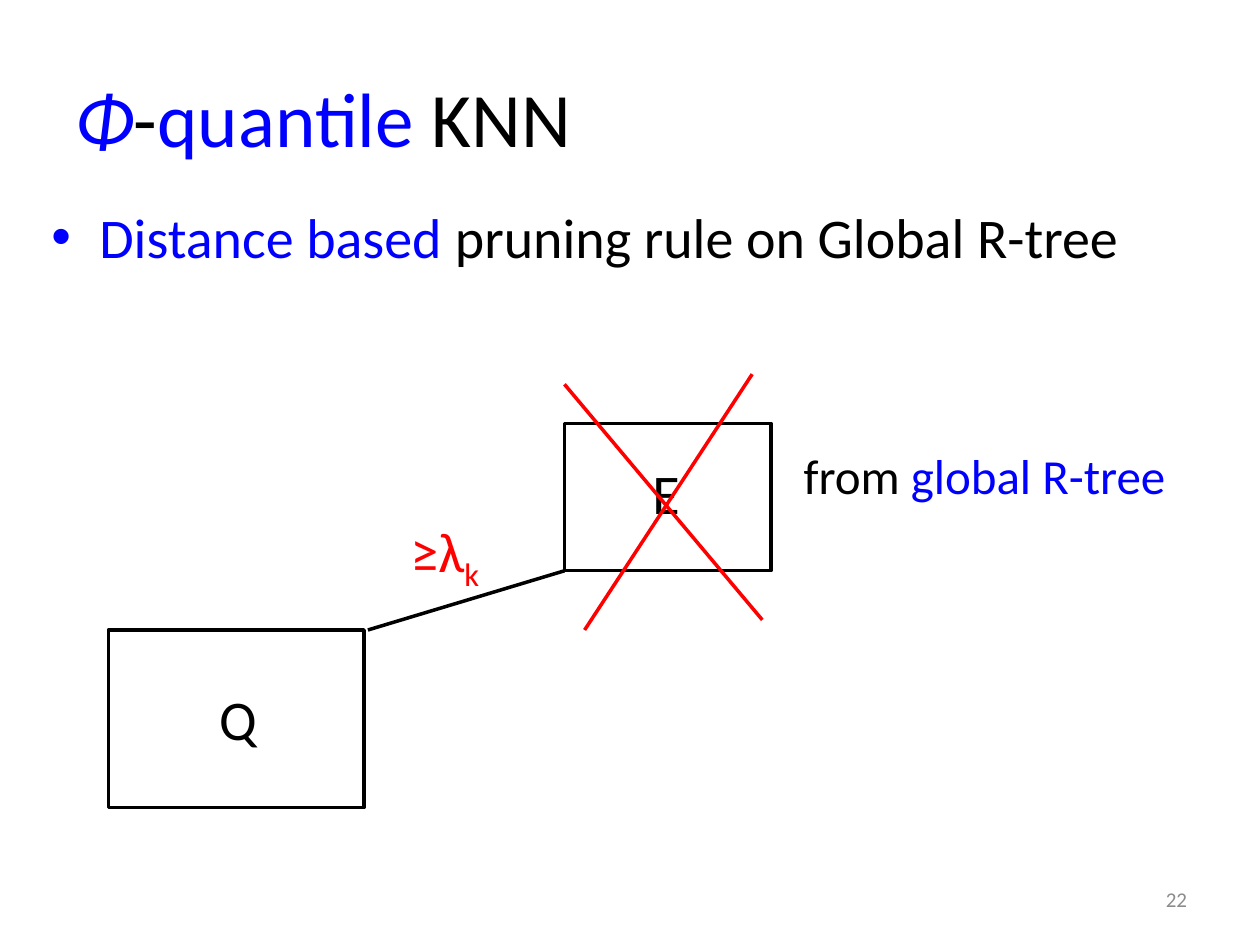
import pptx
import pptx.util
import pptx.dml.color
import pptx.enum.shapes
import pptx.enum.text
import pptx.oxml.ns
import lxml.etree

Pt = pptx.util.Pt
ALIGN = pptx.enum.text.PP_ALIGN
ANCHOR = pptx.enum.text.MSO_ANCHOR
COLORS = {"black": "000000", "blue": "0000FF", "red": "FF0000", "gray": "8C8C8C"}
RGB = {name: pptx.dml.color.RGBColor.from_string(h) for name, h in COLORS.items()}

prs = pptx.Presentation()
prs.slide_width = pptx.util.Inches(10)
prs.slide_height = pptx.util.Inches(7.5)
COL, ROW = prs.slide_width / 100, prs.slide_height / 75
s = prs.slides.add_slide(prs.slide_layouts[6])


def grid(*values):
    """Turn alternating columns and rows into slide lengths."""
    return [round(v * (ROW if i % 2 else COL)) for i, v in enumerate(values)]


def add_text(box, size, parts, wrap=False, anchor=ANCHOR.TOP, align=ALIGN.LEFT):
    """Add a one-paragraph text box from (text, colour) parts."""
    sp = s.shapes.add_textbox(*grid(*box))
    tf = sp.text_frame
    tf.word_wrap = wrap
    tf.vertical_anchor = anchor
    p = tf.paragraphs[0]
    p.alignment = align
    for text, color in parts:
        r = p.add_run()
        r.text = text
        r.font.name = "Calibri"
        r.font.size = Pt(size)
        r.font.color.rgb = RGB[color]
    return p


title = add_text((5, 3, 90, 12.5), 44,
                 [("Φ", "blue"), ("-", "black"), ("quantile ", "blue"), ("KNN", "black")],
                 wrap=True, anchor=ANCHOR.MIDDLE)
title.runs[0].font.italic = True

rule = add_text((3.1, 15.6, 90, 8.6), 32,
                [("Distance based ", "blue"), ("pruning rule on Global R-tree", "black")],
                wrap=True)
rule.space_before = Pt(6.4)
pPr = rule._p.get_or_add_pPr()
indent = pptx.util.Inches(0.38)
pPr.set("marL", str(indent))
pPr.set("indent", str(-indent))
for tag, attrs in (("a:buFont", {"typeface": "Arial"}), ("a:buChar", {"char": "•"})):
    lxml.etree.SubElement(pPr, pptx.oxml.ns.qn(tag), attrs)

add_text((71.9, 69.4, 23.3, 4), 12, [("22", "gray")],
         wrap=True, anchor=ANCHOR.MIDDLE, align=ALIGN.RIGHT)

# Query rectangle Q and tree entry E, each with its label
for name, box, label in (("Q", (8.6, 50, 20.3, 14.1), (16.4, 53.8, 5, 6.4)),
                         ("E", (44.8, 33.6, 16.4, 11.7), (50.8, 35.9, 4.2, 6.4))):
    sp = s.shapes.add_shape(pptx.enum.shapes.MSO_SHAPE.RECTANGLE, *grid(*box))
    sp.shadow.inherit = False
    sp.fill.background()
    sp.line.color.rgb = RGB["black"]
    sp.line.width = Pt(2)
    add_text(label, 32, [(name, "black")])

add_text((62.8, 34.9, 31, 5.7), 28, [("from ", "black"), ("global R-tree", "blue")])

distance = add_text((31.6, 40.5, 7.7, 6.4), 32, [("≥λ", "red"), ("k", "red")])
distance.runs[1]._r.get_or_add_rPr().set("baseline", "-25000")

# Distance between the rectangles, then the cross over the pruned entry
for ends, color in (((29.2, 50, 44.8, 45.3), "black"),
                    ((44.8, 30.5, 60.5, 49.2), "red"),
                    ((59.7, 29.7, 46.4, 50), "red")):
    line = s.shapes.add_connector(pptx.enum.shapes.MSO_CONNECTOR.STRAIGHT, *grid(*ends))
    line.line.color.rgb = RGB[color]
    line.line.width = Pt(2)
    lxml.etree.SubElement(line._element.spPr, pptx.oxml.ns.qn("a:effectLst"))

prs.save("out.pptx")
